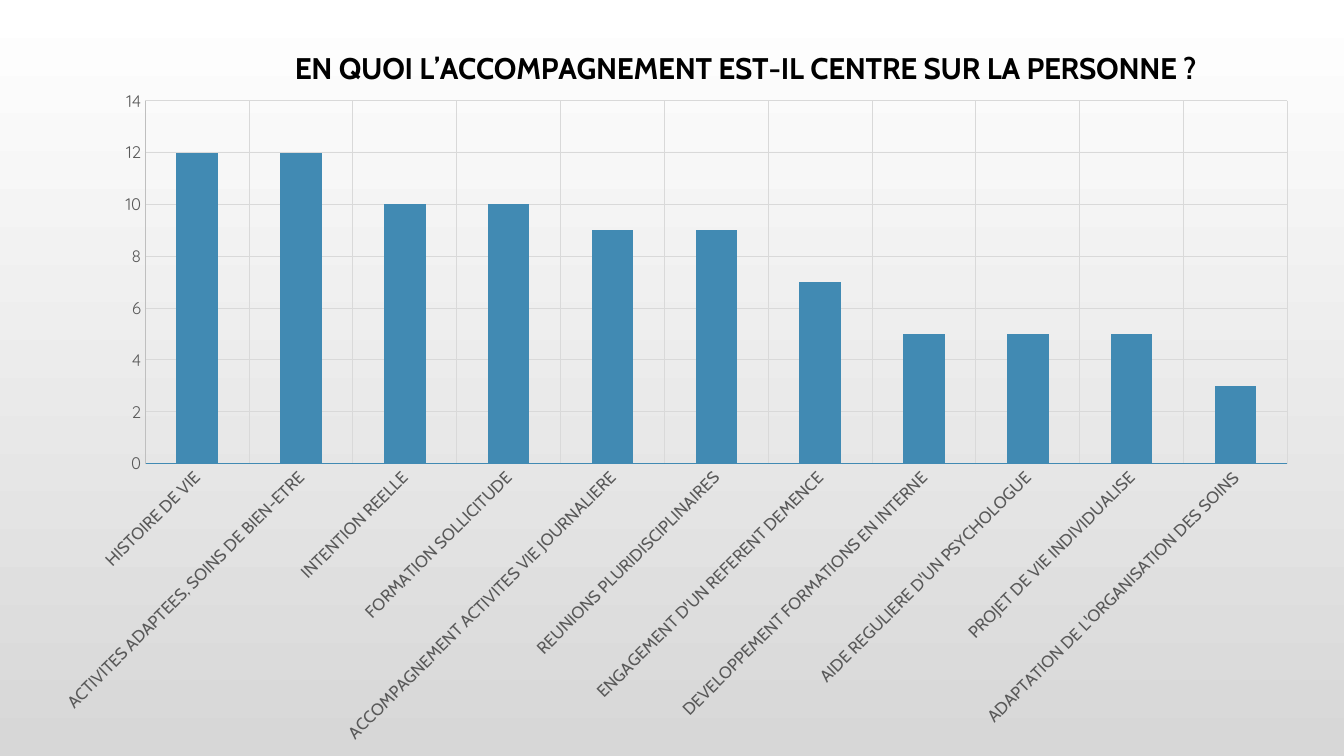
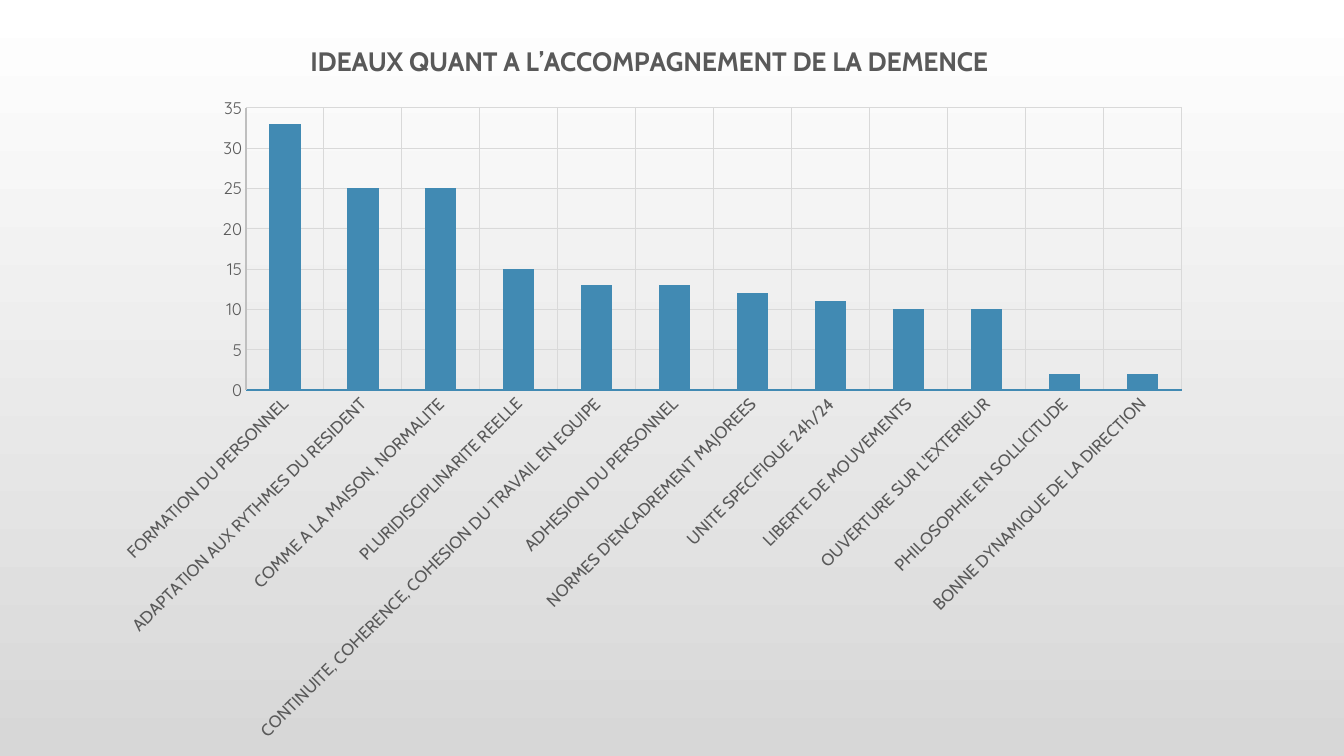
from pptx import Presentation
from pptx.chart.data import CategoryChartData
from pptx.dml.color import RGBColor
from pptx.enum.chart import XL_CHART_TYPE, XL_TICK_MARK
from pptx.oxml import parse_xml
from pptx.oxml.ns import nsdecls, qn
from pptx.util import Inches, Pt
from lxml import etree

COLUMNS = XL_CHART_TYPE.COLUMN_CLUSTERED
NO_TICK = XL_TICK_MARK.NONE
COLORS = {
    "bg_top": "FFFFFF",
    "bg_bottom": "D7D7D7",
    "black": "000000",
    "text": "595959",
    "bar": "418AB3",
    "axis": "BFBFBF",
    "grid": "D9D9D9",
}
HEAD_FONT = "Cabin"
BODY_FONT = "Quicksand"

PERSON_CENTRED = {
    "HISTOIRE DE VIE": 12,
    "ACTIVITES ADAPTEES, SOINS DE BIEN-ETRE": 12,
    "INTENTION REELLE": 10,
    "FORMATION SOLLICITUDE": 10,
    "ACCOMPAGNEMENT ACTIVITES VIE JOURNALIERE": 9,
    "REUNIONS PLURIDISCIPLINAIRES": 9,
    "ENGAGEMENT D'UN REFERENT DEMENCE": 7,
    "DEVELOPPEMENT FORMATIONS EN INTERNE": 5,
    "AIDE REGULIERE D'UN PSYCHOLOGUE": 5,
    "PROJET DE VIE INDIVIDUALISE": 5,
    "ADAPTATION DE L'ORGANISATION DES SOINS": 3,
}
IDEALS = {
    "FORMATION DU PERSONNEL": 33,
    "ADAPTATION AUX RYTHMES DU RESIDENT": 25,
    "COMME A LA MAISON, NORMALITE": 25,
    "PLURIDISCIPLINARITE REELLE": 15,
    "CONTINUITE, COHERENCE, COHESION DU TRAVAIL EN EQUIPE": 13,
    "ADHESION DU PERSONNEL": 13,
    "NORMES D'ENCADREMENT MAJOREES": 12,
    "UNITE SPECIFIQUE 24h/24": 11,
    "LIBERTE DE MOUVEMENTS": 10,
    "OUVERTURE SUR L'EXTERIEUR": 10,
    "PHILOSOPHIE EN SOLLICITUDE": 2,
    "BONNE DYNAMIQUE DE LA DIRECTION": 2,
}


def rgb(name):
    return RGBColor.from_string(COLORS[name])


def style_font(font, name, size, color, bold=False):
    font.name = name
    font.size = Pt(size)
    font.bold = bold
    font.color.rgb = rgb(color)


def style_line(line, color):
    line.color.rgb = rgb(color)
    line.width = Pt(0.75)


def set_background(master):
    fill = master.background.fill
    fill.gradient()
    fill.gradient_angle = 270
    for stop, color in zip(fill.gradient_stops, ("bg_top", "bg_bottom")):
        stop.color.rgb = rgb(color)


def set_layout(parent, index, box, left, top, size=None):
    old = parent.find(qn("c:layout"))
    if old is not None:
        parent.remove(old)
    layout = parse_xml(f"<c:layout {nsdecls('c')}><c:manualLayout/></c:layout>")
    box_left, box_top, box_width, box_height = box
    values = {"layoutTarget": "inner"} if size else {}
    values.update(xMode="edge", yMode="edge",
                  x=(left - box_left) / box_width, y=(top - box_top) / box_height)
    if size:
        values.update(w=size[0] / box_width, h=size[1] / box_height)
    for tag, value in values.items():
        etree.SubElement(layout[0], qn(f"c:{tag}")).set("val", str(value))
    parent.insert(index, layout)


def style_axis(axis, font_name, line_color):
    axis.major_tick_mark = axis.minor_tick_mark = NO_TICK
    axis.has_major_gridlines = True
    style_line(axis.major_gridlines.format.line, "grid")
    style_line(axis.format.line, line_color)
    style_font(axis.tick_labels.font, font_name, 12, "text")


def slant_labels(axis):
    body = axis._element.find(qn("c:txPr")).find(qn("a:bodyPr"))
    body.set("rot", "-2700000")
    body.set("vert", "horz")


def set_title(chart, box, text, size, color, left, top):
    chart.has_title = True
    title = chart.chart_title
    title.include_in_layout = False
    p = title.text_frame.paragraphs[0]
    p.text = text
    style_font(p.font, HEAD_FONT, size, color, bold=True)
    set_layout(title._element, 1, box, left, top)


def add_columns(s, box, scores, plot, top, step):
    data = CategoryChartData()
    data.categories = list(scores)
    data.add_series("Series 1", list(scores.values()))
    chart = s.shapes.add_chart(COLUMNS, *map(Inches, box), data).chart
    chart.has_legend = False
    style_font(chart.font, BODY_FONT, 10, "black")
    style_axis(chart.category_axis, HEAD_FONT, "bar")
    style_axis(chart.value_axis, BODY_FONT, "axis")
    slant_labels(chart.category_axis)

    axis = chart.value_axis
    axis.minimum_scale, axis.maximum_scale, axis.major_unit = 0, top, step
    axis.tick_labels.number_format = "General"
    axis.tick_labels.number_format_is_linked = False

    bars = chart.plots[0]
    bars.gap_width = 150
    bars.vary_by_categories = False
    fill = bars.series[0].format.fill
    fill.solid()
    fill.fore_color.rgb = rgb("bar")
    set_layout(chart._chartSpace.chart.plotArea, 0, box, *plot[:2], size=plot[2:])
    return chart


def main():
    prs = Presentation()
    prs.slide_width, prs.slide_height = Inches(13.33), Inches(7.5)
    set_background(prs.slide_master)
    blank = prs.slide_layouts[6]

    s = prs.slides.add_slide(blank)
    box = (0.29, 0.36, 12.52, 7.14)
    chart = add_columns(s, box, PERSON_CENTRED, (1.44, 1, 11.33, 3.6), 14, 2)
    set_title(chart, box, "EN QUOI L’ACCOMPAGNEMENT EST-IL CENTRE SUR LA PERSONNE ?",
              21.3, "black", 2.87, 0.42)

    s = prs.slides.add_slide(blank)
    box = (1.01, 0.21, 10.93, 7.29)
    chart = add_columns(s, box, IDEALS, (2.44, 1.07, 9.28, 2.8), 35, 5)
    set_title(chart, box, "IDEAUX QUANT A L’ACCOMPAGNEMENT DE LA DEMENCE",
              19, "text", 3.03, 0.38)

    prs.save("out.pptx")


if __name__ == "__main__":
    main()
